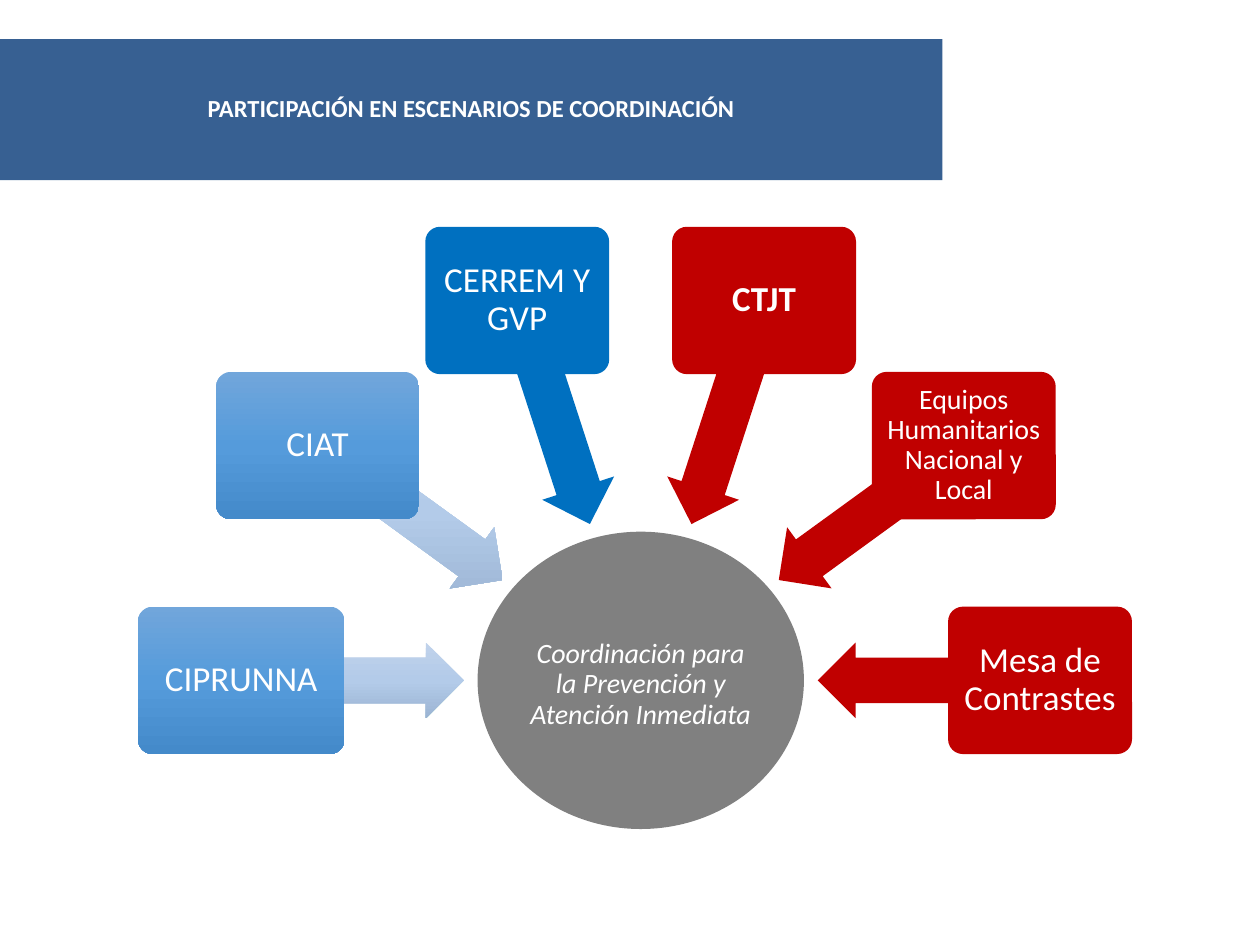
from dataclasses import dataclass
from math import cos, radians, sin

from lxml import etree
from pptx import Presentation
from pptx.dml.color import RGBColor
from pptx.enum.shapes import MSO_SHAPE as Shape
from pptx.enum.text import MSO_ANCHOR as Anchor, PP_ALIGN as Align
from pptx.oxml.ns import qn
from pptx.util import Inches, Pt


@dataclass(frozen=True)
class Theme:
    font: str = "Calibri"
    text: str = "FFFFFF"
    banner: str = "376092"
    hub: str = "808080"
    blue: str = "0070C0"
    red: str = "C00000"
    soft_box: tuple = ("71A6DB", "559BDB", "448ACA")
    soft_arrow: tuple = ("C0D2EB", "B3CBE9", "9BB4D3")
    title_size: int = 14
    small_size: int = 16
    label_size: int = 20


THEME = Theme()

# Content
TITLE = "PARTICIPACIÓN EN ESCENARIOS DE COORDINACIÓN"
HUB_TEXT = "Coordinación para la Prevención y Atención Inmediata"
# Clockwise from the left: label, box width, box fill, arrow fill, size, bold
SCENARIOS = [
    ("CIPRUNNA", 1.64, THEME.soft_box, THEME.soft_arrow, THEME.label_size, False),
    ("CIAT", 1.61, THEME.soft_box, THEME.soft_arrow, THEME.label_size, False),
    ("CERREM Y GVP", 1.46, THEME.blue, THEME.blue, THEME.label_size, False),
    ("CTJT", 1.46, THEME.red, THEME.red, THEME.label_size, True),
    ("Equipos Humanitarios Nacional y Local", 1.46, THEME.red, THEME.red,
     THEME.small_size, False),
    ("Mesa de Contrastes", 1.46, THEME.red, THEME.red, THEME.label_size, False),
]

# Layout
HUB_X, HUB_Y, HUB_W, HUB_H = 5.085, 5.4, 2.59, 2.36
BOX_RADIUS, BOX_H = 3.17, 1.17
ARROW_H = 0.6
# Length and distance from the hub, for the outer, middle and inner pairs
ARROWS = [(1.77, 2.29), (1.81, 2.26), (1.87, 2.24)]
STEP = 180 / (len(SCENARIOS) - 1)


def set_fill(shape, fill):
    """Fill with one colour, or with a vertical gradient of several."""
    if isinstance(fill, str):
        shape.fill.solid()
        shape.fill.fore_color.rgb = RGBColor.from_string(fill)
        return
    shape.fill.gradient()
    gradient = shape._element.spPr.find(qn("a:gradFill"))
    gradient.set("rotWithShape", "0")
    stops = gradient.find(qn("a:gsLst"))
    for stop in list(stops):
        stops.remove(stop)
    for index, color in enumerate(fill):
        position = str(100000 * index // (len(fill) - 1))
        stop = etree.SubElement(stops, qn("a:gs"), pos=position)
        etree.SubElement(stop, qn("a:srgbClr"), val=color)
    gradient.find(qn("a:lin")).set("ang", "5400000")


def add_shape(slide, kind, center_x, center_y, width, height, fill):
    shape = slide.shapes.add_shape(
        kind, Inches(center_x - width / 2), Inches(center_y - height / 2),
        Inches(width), Inches(height))
    shape.shadow.inherit = False
    shape.line.fill.background()
    set_fill(shape, fill)
    return shape


def add_text(shape, text, size, bold=False, italic=False, inset=0.04):
    frame = shape.text_frame
    frame.word_wrap = True
    frame.vertical_anchor = Anchor.MIDDLE
    frame.margin_left = frame.margin_right = Inches(inset)
    frame.margin_top = frame.margin_bottom = Inches(inset)
    paragraph = frame.paragraphs[0]
    paragraph.text = text
    paragraph.alignment = Align.CENTER
    paragraph.line_spacing = 0.9
    font = paragraph.font
    font.name, font.size = THEME.font, Pt(size)
    font.bold, font.italic = bold, italic
    font.color.rgb = RGBColor.from_string(THEME.text)


def polar(angle, radius):
    return (HUB_X + radius * cos(radians(angle)),
            HUB_Y + radius * sin(radians(angle)))


def main():
    presentation = Presentation()
    presentation.slide_width, presentation.slide_height = Inches(10), Inches(7.5)
    slide = presentation.slides.add_slide(presentation.slide_layouts[6])

    # Hub
    hub = add_shape(slide, Shape.OVAL, HUB_X, HUB_Y, HUB_W, HUB_H, THEME.hub)
    add_text(hub, HUB_TEXT, THEME.small_size, italic=True, inset=0.02)
    hub.text_frame.margin_top = Inches(0.09)

    # Scenarios on a half circle, each with an arrow towards the hub
    for index, (label, width, box_fill, arrow_fill, size, bold) in enumerate(SCENARIOS):
        angle = 180 + STEP * index
        length, distance = ARROWS[min(index, len(SCENARIOS) - 1 - index)]
        arrow = add_shape(slide, Shape.LEFT_ARROW, *polar(angle, distance),
                          length, ARROW_H, arrow_fill)
        arrow.adjustments[0], arrow.adjustments[1] = 0.6, 0.5
        arrow.rotation = angle % 360

        box = add_shape(slide, Shape.ROUNDED_RECTANGLE, *polar(angle, BOX_RADIUS),
                        width, BOX_H, box_fill)
        box.adjustments[0] = 0.1
        add_text(box, label, size, bold)

    # Title banner
    banner = add_shape(slide, Shape.RECTANGLE, 3.74, 0.87, 7.48, 1.12, THEME.banner)
    add_text(banner, TITLE, THEME.title_size, bold=True)

    presentation.save("out.pptx")


if __name__ == "__main__":
    main()
